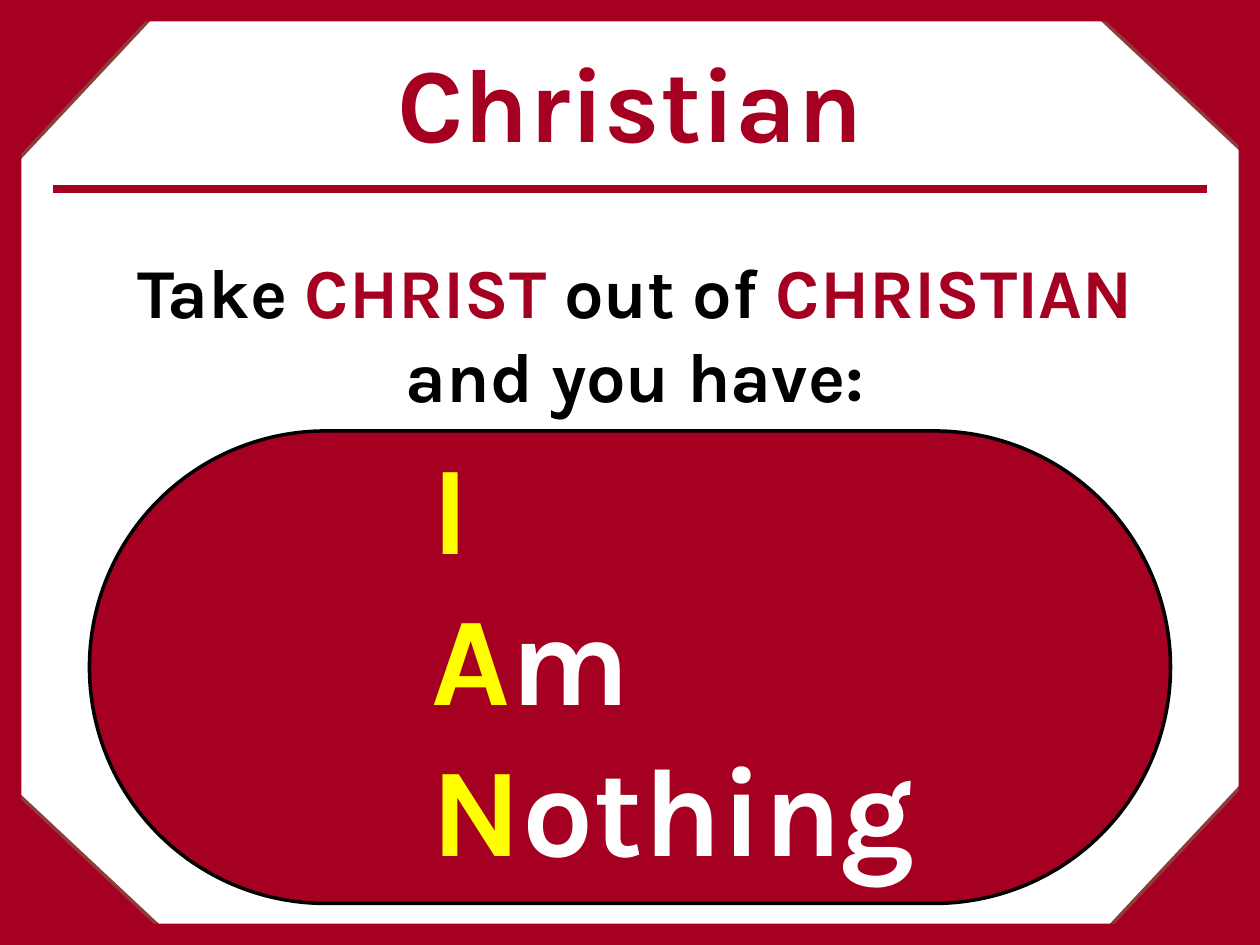
from lxml import etree
from pptx import Presentation, util as u
from pptx.dml.color import RGBColor
from pptx.enum import shapes, text
from pptx.oxml.ns import qn

WIDTH, HEIGHT = 10, 7.5
BORDER = 0.17
FONT = "Karla"
COLORS = {
    "crimson": "A50021",
    "edge": "8E3B39",
    "black": "000000",
    "white": "FFFFFF",
    "yellow": "FFFF00",
}


def color(name):
    return RGBColor.from_string(COLORS[name])


def add_block(slide, kind, box, line=None):
    """Add a crimson shape, outlined only when a line colour is named."""
    shape = slide.shapes.add_shape(kind, *map(u.Inches, box))
    shape.shadow.inherit = False
    shape.fill.solid()
    shape.fill.fore_color.rgb = color("crimson")
    if line:
        shape.line.color.rgb = color(line)
        shape.line.width = u.Pt(2)
    else:
        shape.line.fill.background()
    return shape


def add_words(slide, box, paragraphs, size, align, anchor=text.MSO_ANCHOR.TOP):
    """Write paragraphs of (words, colour) runs; None marks a line break."""
    frame = slide.shapes.add_textbox(*map(u.Inches, box)).text_frame
    frame.word_wrap = True
    frame.vertical_anchor = anchor
    for index, runs in enumerate(paragraphs):
        paragraph = frame.add_paragraph() if index else frame.paragraphs[0]
        paragraph.alignment = align
        paragraph.font.name = FONT
        paragraph.font.size = u.Pt(size)
        paragraph.font.bold = True
        for part in runs:
            if part is None:
                paragraph.add_line_break()
                continue
            run = paragraph.add_run()
            run.text, name = part
            run.font.color.rgb = color(name)


def draw_frame(slide, left, top, width, height):
    """Cut the four corners with triangles and band the four sides."""
    long, short = 1.42, 1.33
    corners = [(0, 1, 0), (0, 0, 90), (1, 0, 180), (1, 1, 270)]
    for column, row, rotation in corners:
        across, down = (short, long) if rotation % 180 else (long, short)
        center_x = left + column * (width - across) + across / 2
        center_y = top + row * (height - down) + down / 2
        box = (center_x - long / 2, center_y - short / 2, long, short)
        triangle = add_block(slide, shapes.MSO_SHAPE.RIGHT_TRIANGLE, box, "edge")
        triangle.rotation = rotation
    for box in [
        (left, top, width, BORDER),
        (left, top + height - BORDER, width, BORDER),
        (left, top, BORDER, height),
        (left + width - BORDER, top, BORDER, height),
    ]:
        add_block(slide, shapes.MSO_SHAPE.RECTANGLE, box)


def draw_title(slide, left, top, width, height):
    """Place the heading with a rule just below its box."""
    add_words(slide, (left, top, width, height), [[("Christian", "crimson")]],
              60, text.PP_ALIGN.CENTER, text.MSO_ANCHOR.MIDDLE)
    rule_y = top + height + 0.08
    rule = slide.shapes.add_connector(
        shapes.MSO_CONNECTOR.STRAIGHT,
        *map(u.Inches, (left - 0.08, rule_y, left + width + 0.08, rule_y)))
    rule.line.color.rgb = color("crimson")
    rule.line.width = u.Pt(4.5)
    etree.SubElement(rule._element.spPr, qn("a:effectLst"))


def draw_lead(slide, *box):
    runs = [("Take ", "black"), ("CHRIST", "crimson"), (" out of ", "black"),
            ("CHRISTIAN", "crimson"), None, ("and you have:", "black")]
    add_words(slide, box, [runs], 40, text.PP_ALIGN.CENTER)


def draw_answer(slide, left, top, width, height):
    """Place the pill and its acrostic, initials in yellow."""
    pill = add_block(slide, shapes.MSO_SHAPE.ROUNDED_RECTANGLE,
                     (left, top, width, height), "black")
    pill.adjustments[0] = 0.5
    paragraphs = [
        [(part, name) for part, name in
         ((word[0], "yellow"), (word[1:], "white")) if part]
        for word in ("I", "Am", "Nothing")
    ]
    add_words(slide, (left + 2.62, top - 0.07, 4.75, height),
              paragraphs, 72, text.PP_ALIGN.LEFT)


def main():
    presentation = Presentation()
    presentation.slide_width = u.Inches(WIDTH)
    presentation.slide_height = u.Inches(HEIGHT)
    slide = presentation.slides.add_slide(presentation.slide_layouts[6])
    slide.background.fill.solid()
    slide.background.fill.fore_color.rgb = color("white")
    draw_frame(slide, 0, 0, WIDTH, HEIGHT)
    draw_title(slide, 0.5, BORDER, 9, 1.25)
    draw_answer(slide, 0.71, 3.42, 8.58, 3.75)
    draw_lead(slide, 0.5, 1.92, 9.08, 1.45)
    presentation.save("out.pptx")


if __name__ == "__main__":
    main()
